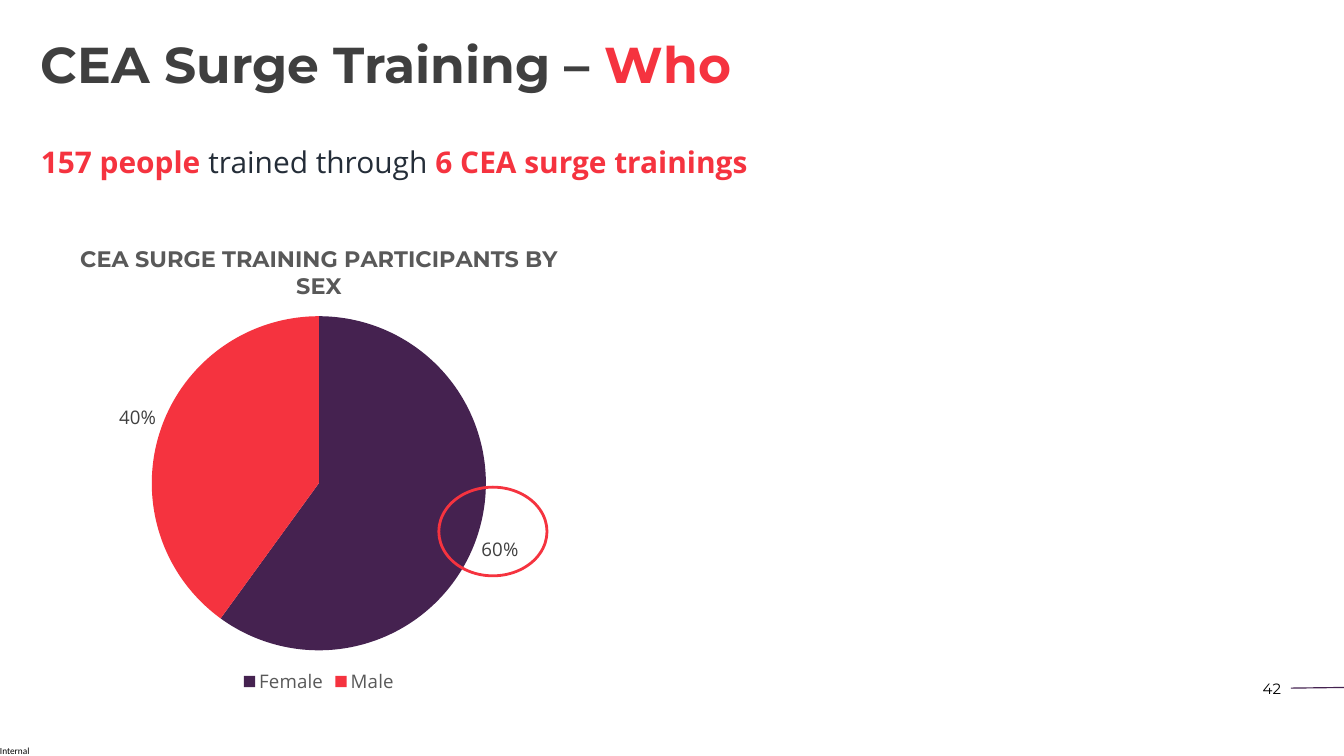
from lxml import etree
from pptx import Presentation
from pptx import util as u
from pptx.chart.data import CategoryChartData
from pptx.dml.color import RGBColor
from pptx.enum import chart as ch, shapes, text
from pptx.oxml import parse_xml
from pptx.oxml.ns import nsdecls, qn

THEME = {
    "red": "F5333F", "plum": "452250", "dark": "3F3F3F", "ink": "242D38",
    "grey": "595959", "label": "404040", "black": "000000",
    "head": "Montserrat", "body": "Open Sans", "mark": "Calibri",
    "title": 54, "lead": 32, "chart": 24, "small": 20, "page": 16, "tag": 10,
}
WIDE, HIGH = 20, 11.25

# Content: runs are (words, colour, bold)
TITLE = [("CEA Surge Training – ", "dark", True), ("Who", "red", True)]
LEAD = [("157 people ", "red", True), ("trained through ", "ink", False),
        ("6 CEA surge trainings", "red", True)]
PAGE = [("42", "black", False)]
TAG = [("Internal", "black", False)]
PIE = {"title": "CEA SURGE TRAINING PARTICIPANTS BY SEX",
       "parts": [("Female", 0.6, "plum"), ("Male", 0.4, "red")]}

# Places as shares of the slide: left, top, width, height
SPOTS = {
    "title": (0.0255, 0.055, 0.7745, 0.074),
    "lead": (0.0255, 0.186, 0.6435, 0.172),
    "page": (0.922, 0.894, 0.036, 0.033),
    "tag": (0, 0.986, 0.0235, 0.015),
    "pie": (0, 0.2987, 0.4745, 0.625),
    "ring": (0.3265, 0.6444, 0.0805, 0.1173),
}
PLOT = {"x": 0.238, "y": 0.191, "w": 0.524, "h": 0.708}  # shares of the chart


def place(key):
    x, y, w, h = SPOTS[key]
    return [u.Inches(n) for n in (x * WIDE, y * HIGH, w * WIDE, h * HIGH)]


def tint(key):
    return RGBColor.from_string(THEME[key])


def style(font, face, size, color, bold=False):
    font.name, font.size, font.bold = THEME[face], u.Pt(THEME[size]), bold
    font.color.rgb = tint(color)


def write(slide, key, runs, face, pad=True):
    frame = slide.shapes.add_textbox(*place(key)).text_frame
    frame.word_wrap = True
    if not pad:
        frame.margin_left = frame.margin_right = 0
        frame.margin_top = frame.margin_bottom = 0
    para = frame.paragraphs[0]
    for words, color, bold in runs:
        run = para.add_run()
        run.text = words
        style(run.font, face, key, color, bold)
    return para


def draw_pie(slide):
    data = CategoryChartData(number_format="0%")
    data.categories = [name for name, _, _ in PIE["parts"]]
    data.add_series("Series 1", [val for _, val, _ in PIE["parts"]])
    pie = slide.shapes.add_chart(ch.XL_CHART_TYPE.PIE, *place("pie"), data).chart
    style(pie.font, "body", "small", "black")

    # Title and legend
    pie.has_title = True
    run = pie.chart_title.text_frame.paragraphs[0].add_run()
    run.text = PIE["title"]
    style(run.font, "head", "chart", "grey", True)
    pie.chart_title.include_in_layout = False
    pie.has_legend = True
    pie.legend.position = ch.XL_LEGEND_POSITION.BOTTOM
    pie.legend.include_in_layout = False
    style(pie.legend.font, "body", "small", "grey")

    # Slices and their labels
    plot = pie.plots[0]
    plot.vary_by_categories = True
    for i, (_, _, color) in enumerate(PIE["parts"]):
        fill = plot.series[0].points[i].format.fill
        fill.solid()
        fill.fore_color.rgb = tint(color)
    labels = plot.series[0].data_labels
    labels.show_value = True
    labels.show_percentage = False
    labels.number_format, labels.number_format_is_linked = "0%", False
    labels.position = ch.XL_LABEL_POSITION.OUTSIDE_END
    style(labels.font, "body", "small", "label")

    # Fixed plot area
    area = plot._element.getparent()
    for old in area.findall(qn("c:layout")):
        area.remove(old)
    sides = "".join(f'<c:{k} val="{v}"/>' for k, v in PLOT.items())
    area.insert(0, parse_xml(
        f'<c:layout {nsdecls("c")}><c:manualLayout><c:layoutTarget val="inner"/>'
        f'<c:xMode val="edge"/><c:yMode val="edge"/>{sides}'
        '</c:manualLayout></c:layout>'))


def main():
    deck = Presentation()
    deck.slide_width, deck.slide_height = u.Inches(WIDE), u.Inches(HIGH)
    slide = deck.slides.add_slide(deck.slide_layouts[6])

    # Footer: rule, page number and tag
    rule = slide.shapes.add_connector(
        shapes.MSO_CONNECTOR.STRAIGHT, u.Inches(19.21), u.Inches(10.24),
        u.Inches(WIDE), u.Inches(10.23))
    rule.line.color.rgb, rule.line.width = tint("plum"), u.Pt(1.25)
    etree.SubElement(rule._element.spPr, qn("a:effectLst"))
    write(slide, "page", PAGE, "head").alignment = text.PP_ALIGN.RIGHT
    write(slide, "tag", TAG, "mark", pad=False)

    # Heading and lead line
    write(slide, "title", TITLE, "head").line_spacing = 0.8
    write(slide, "lead", LEAD, "body").space_after = u.Pt(54)

    # Chart with the ringed share
    draw_pie(slide)
    ring = slide.shapes.add_shape(shapes.MSO_SHAPE.OVAL, *place("ring"))
    ring.shadow.inherit = False
    ring.fill.background()
    ring.line.color.rgb, ring.line.width = tint("red"), u.Pt(3)

    deck.save("out.pptx")


if __name__ == "__main__":
    main()
